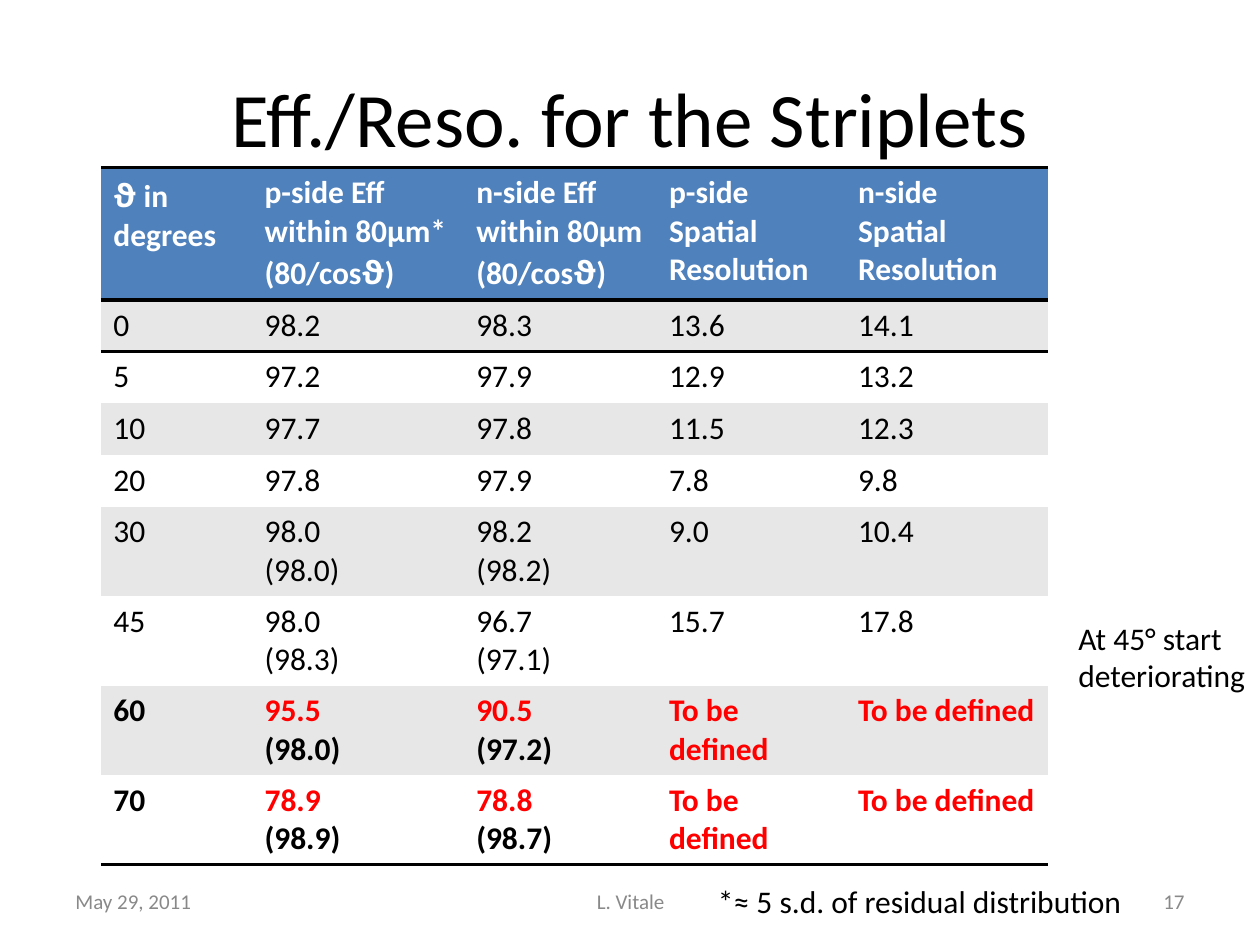
from dataclasses import dataclass

from lxml.etree import SubElement
from pptx import Presentation
from pptx.dml.color import RGBColor
from pptx.enum.text import MSO_ANCHOR as Anchor, PP_ALIGN as Align
from pptx.oxml.ns import qn
from pptx.slide import Slide
from pptx.table import Table, _Cell as Cell
from pptx.text.text import TextFrame
from pptx.util import Inches, Pt

BLACK = RGBColor(0x00, 0x00, 0x00)
WHITE = RGBColor(0xFF, 0xFF, 0xFF)
RED = RGBColor(0xFF, 0x00, 0x00)
BLUE = RGBColor(0x4F, 0x81, 0xBD)
BAND = RGBColor(0xE7, 0xE7, 0xE7)
GRAY = RGBColor(0x89, 0x89, 0x89)
FONT = "Calibri"
THETA_FONT = "Open Sans"
PLAIN_TABLE_STYLE = "{2D5ABB26-0587-4C30-8999-92F81FD0307C}"

COLUMN_WIDTHS = [1.2, 1.68, 1.53, 1.5, 1.61]
ROW_HEIGHT = 0.41
HEADERS = [
    "ϑ in\ndegrees",
    "p-side Eff\nwithin 80μm*\n(80/cosϑ)",
    "n-side Eff\nwithin 80μm\n(80/cosϑ)",
    "p-side\nSpatial Resolution",
    "n-side\nSpatial Resolution",
]


@dataclass
class Measurement:
    angle: str
    p_efficiency: str
    n_efficiency: str
    p_resolution: str
    n_resolution: str
    critical: bool = False

    def values(self) -> list[str]:
        return [self.angle, self.p_efficiency, self.n_efficiency,
                self.p_resolution, self.n_resolution]


@dataclass
class Label:
    text: str
    left: float
    top: float
    width: float
    height: float
    size: int = 18
    color: RGBColor = BLACK
    align: Align = Align.LEFT
    anchor: Anchor = Anchor.TOP
    wrap: bool = False


@dataclass
class FooterLabel(Label):
    top: float = 6.95
    width: float = 2.33
    height: float = 0.4
    size: int = 12
    color: RGBColor = GRAY
    anchor: Anchor = Anchor.MIDDLE
    wrap: bool = True


PENDING = "To be defined"
MEASUREMENTS = [
    Measurement("0", "98.2", "98.3", "13.6", "14.1"),
    Measurement("5", "97.2", "97.9", "12.9", "13.2"),
    Measurement("10", "97.7", "97.8", "11.5", "12.3"),
    Measurement("20", "97.8", "97.9", "7.8", "9.8"),
    Measurement("30", "98.0\n(98.0)", "98.2\n(98.2)", "9.0", "10.4"),
    Measurement("45", "98.0\n(98.3)", "96.7\n(97.1)", "15.7", "17.8"),
    Measurement("60", "95.5\n(98.0)", "90.5\n(97.2)", PENDING, PENDING, True),
    Measurement("70", "78.9\n(98.9)", "78.8\n(98.7)", PENDING, PENDING, True),
]
LABELS = [
    Label("At 45° start\ndeteriorating", 8.46, 4.86, 1.54, 0.71),
    FooterLabel("May 29, 2011", 0.5),
    FooterLabel("17", 7.17, align=Align.RIGHT),
    FooterLabel("L. Vitale", 3.42, width=3.17, align=Align.CENTER),
    Label("*≈ 5 s.d. of residual distribution", 5.6, 6.95, 3.44, 0.4),
]


def format_text(frame: TextFrame, size: int, color: RGBColor,
                align: Align = Align.LEFT, bold: bool = False) -> None:
    for paragraph in frame.paragraphs:
        paragraph.alignment = align
        for run in paragraph.runs:
            run.font.name = FONT
            run.font.size = Pt(size)
            run.font.bold = bold
            run.font.color.rgb = color


def split_theta(frame: TextFrame) -> None:
    for paragraph in frame.paragraphs:
        pieces = paragraph.text.partition("ϑ")
        paragraph.text = ""
        for piece in filter(None, pieces):
            paragraph.add_run().text = piece


def set_theta_font(frame: TextFrame) -> None:
    for paragraph in frame.paragraphs:
        for run in paragraph.runs:
            if run.text == "ϑ":
                run.font.name = THETA_FONT
                for tag in ("a:ea", "a:cs"):
                    SubElement(run.font._element, qn(tag), typeface=THETA_FONT)


def add_border(cell: Cell, tag: str) -> None:
    properties = cell._tc.get_or_add_tcPr()
    line = SubElement(properties, qn(tag), w=str(Pt(2)))
    fill = SubElement(line, qn("a:solidFill"))
    SubElement(fill, qn("a:srgbClr"), val=str(BLACK))


def fill_cell(cell: Cell, text: str, fill: RGBColor, color: RGBColor,
              bold: bool, borders: tuple[str, ...]) -> None:
    for tag in borders:
        add_border(cell, tag)
    cell.fill.solid()
    cell.fill.fore_color.rgb = fill
    cell.text_frame.text = text
    split_theta(cell.text_frame)
    format_text(cell.text_frame, 18, color, bold=bold)
    set_theta_font(cell.text_frame)


def fill_measurement(table: Table, row: int, measurement: Measurement) -> None:
    fill = BAND if row % 2 else WHITE
    borders = ()
    if row == 1:
        borders = ("a:lnT",)
    elif row == len(MEASUREMENTS):
        borders = ("a:lnB",)
    for column, text in enumerate(measurement.values()):
        cell = table.cell(row, column)
        fill_cell(cell, text, fill, BLACK, measurement.critical, borders)
        if measurement.critical and column > 0:
            cell.text_frame.paragraphs[0].runs[0].font.color.rgb = RED


def add_results_table(slide: Slide) -> None:
    row_count = len(MEASUREMENTS) + 1
    frame = slide.shapes.add_table(
        row_count, len(HEADERS), Inches(0.8), Inches(1.33),
        Inches(sum(COLUMN_WIDTHS)), Inches(row_count * ROW_HEIGHT))
    table = frame.table
    table._tbl.tblPr.find(qn("a:tableStyleId")).text = PLAIN_TABLE_STYLE
    for column, width in zip(table.columns, COLUMN_WIDTHS):
        column.width = Inches(width)
    for column, text in enumerate(HEADERS):
        fill_cell(table.cell(0, column), text, BLUE, WHITE, True, ("a:lnT", "a:lnB"))
    for row, measurement in enumerate(MEASUREMENTS, start=1):
        fill_measurement(table, row, measurement)


def add_label(slide: Slide, label: Label) -> None:
    box = slide.shapes.add_textbox(Inches(label.left), Inches(label.top),
                                   Inches(label.width), Inches(label.height))
    frame = box.text_frame
    frame.word_wrap = label.wrap
    frame.vertical_anchor = label.anchor
    frame.text = label.text
    format_text(frame, label.size, label.color, label.align)


def add_title(slide: Slide) -> None:
    title = slide.shapes.title
    title.left, title.top = Inches(0.5), Inches(0.3)
    title.width, title.height = Inches(9), Inches(1.25)
    title.text_frame.text = "Eff./Reso. for the Striplets"
    title.text_frame.vertical_anchor = Anchor.MIDDLE
    format_text(title.text_frame, 44, BLACK, Align.CENTER)


def main() -> None:
    presentation = Presentation()
    presentation.slide_width, presentation.slide_height = Inches(10), Inches(7.5)
    slide = presentation.slides.add_slide(presentation.slide_layouts[5])
    add_title(slide)
    add_results_table(slide)
    for label in LABELS:
        add_label(slide, label)
    presentation.save("out.pptx")


if __name__ == "__main__":
    main()
